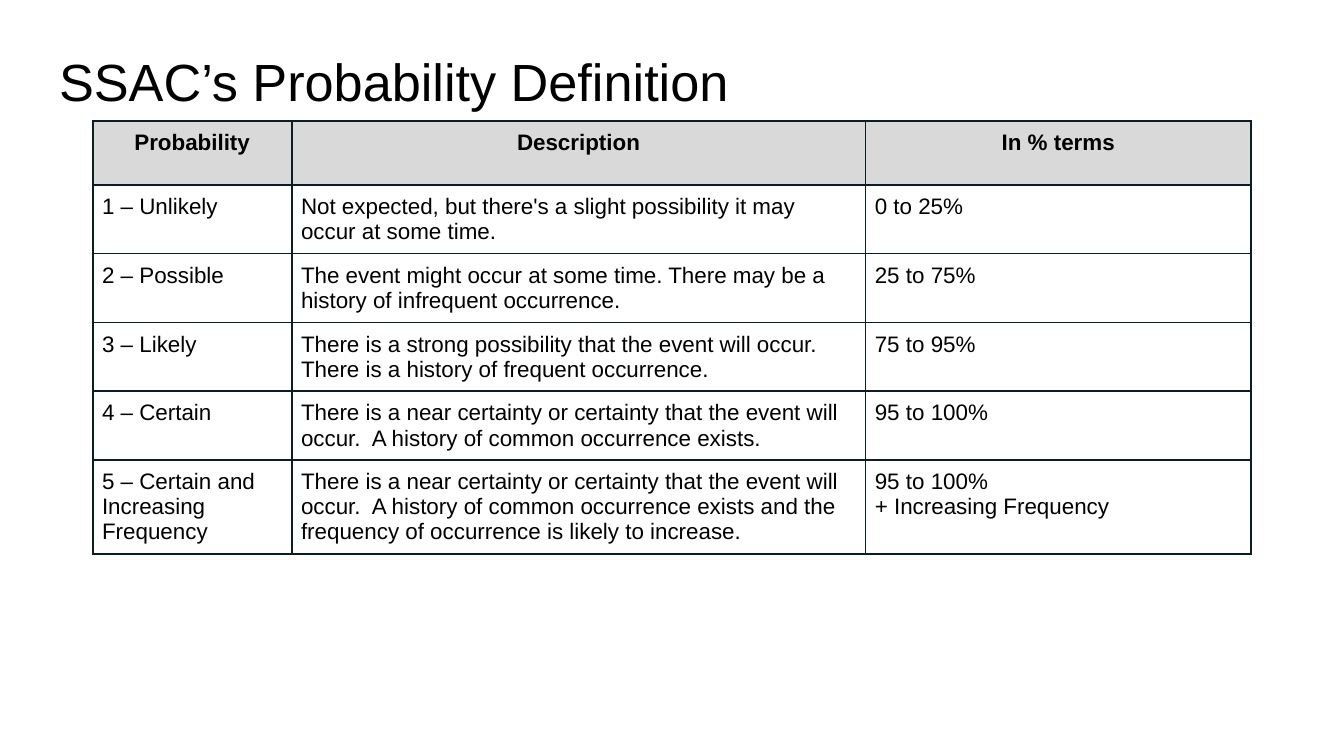
from pptx import Presentation
from pptx.dml.color import RGBColor
from pptx.enum.text import MSO_ANCHOR, PP_ALIGN
from pptx.oxml import parse_xml
from pptx.oxml.ns import nsdecls
from pptx.util import Pt

LEFT, CENTER = PP_ALIGN.LEFT, PP_ALIGN.CENTER
TOP = MSO_ANCHOR.TOP
FONT, INK, BORDER = "Arial", "000000", "0A1F24"
HEADER_FILL, BODY_FILL = "D9D9D9", "FFFFFF"
COL_WIDTHS = [106.6, 307.4, 206.6]
ROW_HEIGHTS = [34.2, 36.9, 36.9, 36.9, 36.9, 50.4]
ROWS = [
    ("Probability", "Description", "In % terms"),
    ("1 – Unlikely",
     "Not expected, but there's a slight possibility it may occur at some time.",
     "0 to 25%"),
    ("2 – Possible",
     "The event might occur at some time. There may be a history of infrequent occurrence.",
     "25 to 75%"),
    ("3 – Likely",
     "There is a strong possibility that the event will occur.  "
     "There is a history of frequent occurrence.",
     "75 to 95%"),
    ("4 – Certain",
     "There is a near certainty or certainty that the event will occur.  "
     "A history of common occurrence exists.",
     "95 to 100%"),
    ("5 – Certain and Increasing Frequency",
     "There is a near certainty or certainty that the event will occur.  "
     "A history of common occurrence exists and the frequency of occurrence "
     "is likely to increase.",
     "95 to 100%\n+ Increasing Frequency"),
]


def rgb(value):
    """Turn a hex string into a colour."""
    return RGBColor.from_string(value)


def write(tf, text, size=12, bold=False, align=LEFT):
    """Fill a text frame with one formatted paragraph per line."""
    tf.text = text
    for p in tf.paragraphs:
        p.alignment = align
        for r in p.runs:
            r.font.name = FONT
            r.font.size = Pt(size)
            r.font.bold = bold
            r.font.color.rgb = rgb(INK)


def set_margins(box, margin):
    """Give a cell or text frame equal margins on all sides."""
    box.margin_left = box.margin_right = Pt(margin)
    box.margin_top = box.margin_bottom = Pt(margin)


def set_borders(cell, color=BORDER, width=1):
    """Draw a solid line on all four sides of a cell."""
    tc_pr = cell._tc.get_or_add_tcPr()
    for i, side in enumerate(("lnL", "lnR", "lnT", "lnB")):
        tc_pr.insert(i, parse_xml(
            f'<a:{side} {nsdecls("a")} w="{Pt(width)}"><a:solidFill>'
            f'<a:srgbClr val="{color}"/></a:solidFill></a:{side}>'))


def add_title(s, text):
    """Place and format the slide title."""
    sp = s.shapes.title
    sp.left, sp.top, sp.width, sp.height = Pt(24.5), Pt(19.4), Pt(671), Pt(45.4)
    tf = sp.text_frame
    tf.vertical_anchor = TOP
    set_margins(tf, 7.2)
    write(tf, text, size=28)


def add_grid(s, left, top):
    """Add the table of probability levels."""
    table = s.shapes.add_table(
        len(ROWS), len(COL_WIDTHS), Pt(left), Pt(top),
        Pt(sum(COL_WIDTHS)), Pt(sum(ROW_HEIGHTS))).table
    for col, width in zip(table.columns, COL_WIDTHS):
        col.width = Pt(width)
    for i, (row, height, texts) in enumerate(zip(table.rows, ROW_HEIGHTS, ROWS)):
        row.height = Pt(height)
        header = i == 0
        for cell, text in zip(row.cells, texts):
            set_margins(cell, 5)
            cell.vertical_anchor = TOP
            cell.fill.solid()
            cell.fill.fore_color.rgb = rgb(HEADER_FILL if header else BODY_FILL)
            set_borders(cell)
            write(cell.text_frame, text, bold=header,
                  align=CENTER if header else LEFT)


def main():
    """Build the slide and save it."""
    prs = Presentation()
    prs.slide_width, prs.slide_height = Pt(720), Pt(405)
    s = prs.slides.add_slide(prs.slide_layouts[5])
    add_title(s, "SSAC’s Probability Definition")
    add_grid(s, 49.7, 64.8)
    prs.save("out.pptx")


main()
